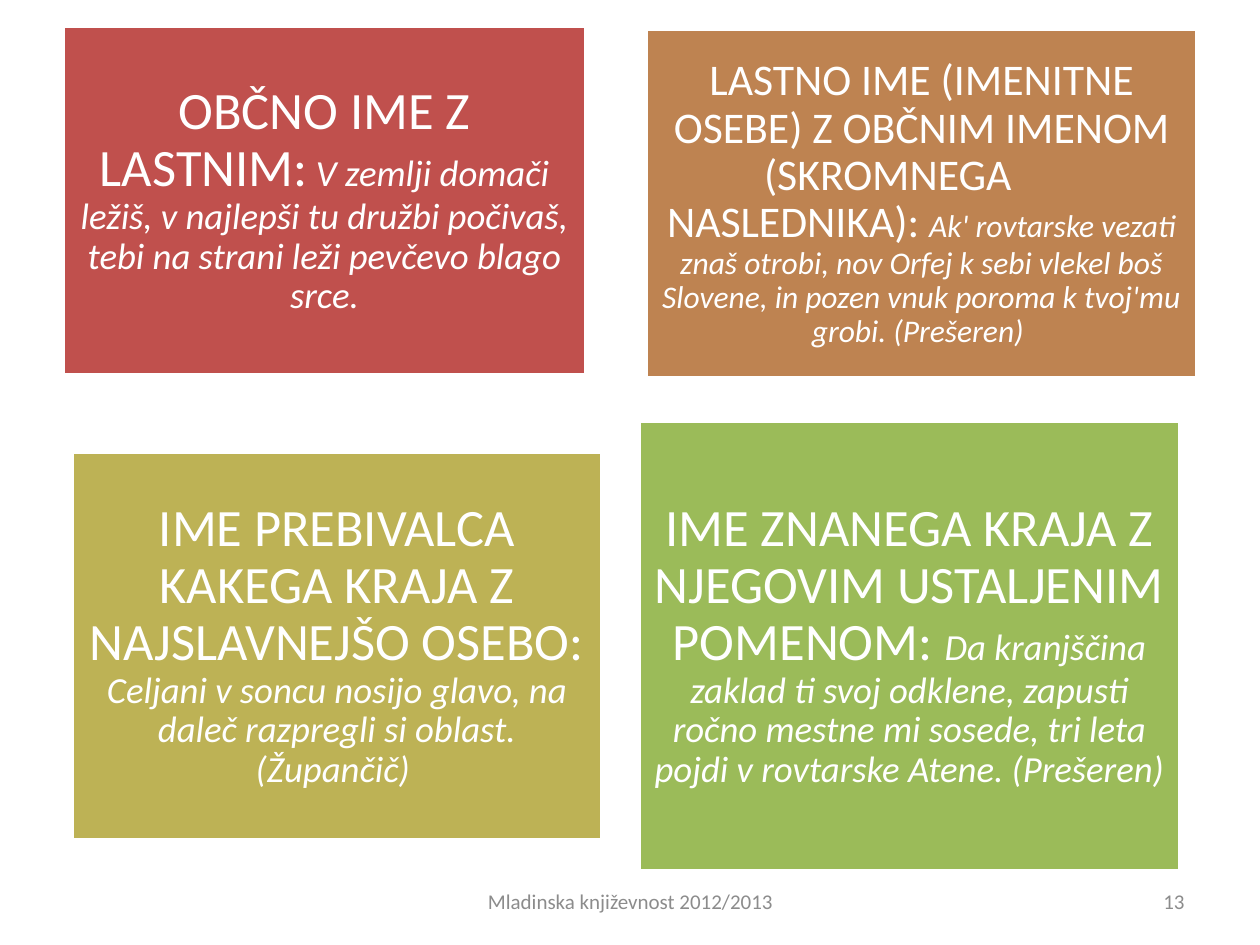
from pptx import Presentation
from pptx.dml.color import RGBColor
from pptx.enum.shapes import MSO_SHAPE
from pptx.enum.text import MSO_ANCHOR, PP_ALIGN
from pptx.util import Pt

SCALE = 914400 / 126
FONT = "Calibri"
WHITE = "FFFFFF"
GREY = "8C8C8C"

CARDS = [
    ((63, 26, 523, 349), "C0504D", 15, 30, 21,
     "OBČNO IME Z LASTNIM:",
     " V zemlji domači ležiš, v najlepši tu družbi počivaš, "
     "tebi na strani leži pevčevo blago srce."),
    ((646, 29, 551, 349), "BE8351", 13, 25, 18,
     "LASTNO IME (IMENITNE OSEBE) Z OBČNIM IMENOM (SKROMNEGA \tNASLEDNIKA): ",
     "Ak' rovtarske vezati znaš otrobi, nov Orfej k sebi vlekel boš Slovene, "
     "in pozen vnuk poroma k tvoj'mu grobi. (Prešeren) "),
    ((72, 452, 530, 388), "BDB255", 15, 30, 21,
     "IME PREBIVALCA KAKEGA KRAJA Z NAJSLAVNEJŠO OSEBO: ",
     "Celjani v soncu nosijo glavo, na daleč razpregli si oblast. (Župančič) "),
    ((639, 421, 541, 450), "9BBB59", 15, 30, 21,
     "IME ZNANEGA KRAJA Z NJEGOVIM USTALJENIM POMENOM: ",
     "Da kranjščina zaklad ti svoj odklene, zapusti ročno mestne mi sosede, "
     "tri leta pojdi v rovtarske Atene. (Prešeren)"),
]


def px(size):
    return round(size * SCALE)


def color(code):
    return RGBColor.from_string(code)


def write(para, text, size=12, tint=WHITE, slant=False):
    run = para.add_run()
    run.text = text
    font = run.font
    font.name = FONT
    font.size = Pt(size)
    font.italic = slant
    font.color.rgb = color(tint)


def setup(shape, align, inset=None):
    frame = shape.text_frame
    frame.word_wrap = True
    frame.vertical_anchor = MSO_ANCHOR.MIDDLE
    if inset is not None:
        frame.margin_left = frame.margin_right = px(inset)
        frame.margin_top = frame.margin_bottom = px(inset)
    para = frame.paragraphs[0]
    para.alignment = align
    return para


def card(slide, box, fill, inset, large, small, head, verse):
    shape = slide.shapes.add_shape(MSO_SHAPE.RECTANGLE, *map(px, box))
    shape.shadow.inherit = False
    shape.fill.solid()
    shape.fill.fore_color.rgb = color(fill)
    shape.line.color.rgb = color(WHITE)
    shape.line.width = Pt(2)
    para = setup(shape, PP_ALIGN.CENTER, inset)
    para.line_spacing = 0.9
    write(para, head, size=large)
    write(para, verse, size=small, slant=True)


def label(slide, box, text, align):
    shape = slide.shapes.add_textbox(*map(px, box))
    write(setup(shape, align), text, tint=GREY)


def main():
    deck = Presentation()
    deck.slide_width = px(1260)
    deck.slide_height = px(945)
    slide = deck.slides.add_slide(deck.slide_layouts[6])
    for item in CARDS:
        card(slide, *item)
    label(slide, (431, 876, 399, 50), "Mladinska književnost 2012/2013",
          PP_ALIGN.CENTER)
    label(slide, (903, 876, 294, 50), "13", PP_ALIGN.RIGHT)
    deck.save("out.pptx")


if __name__ == "__main__":
    main()
